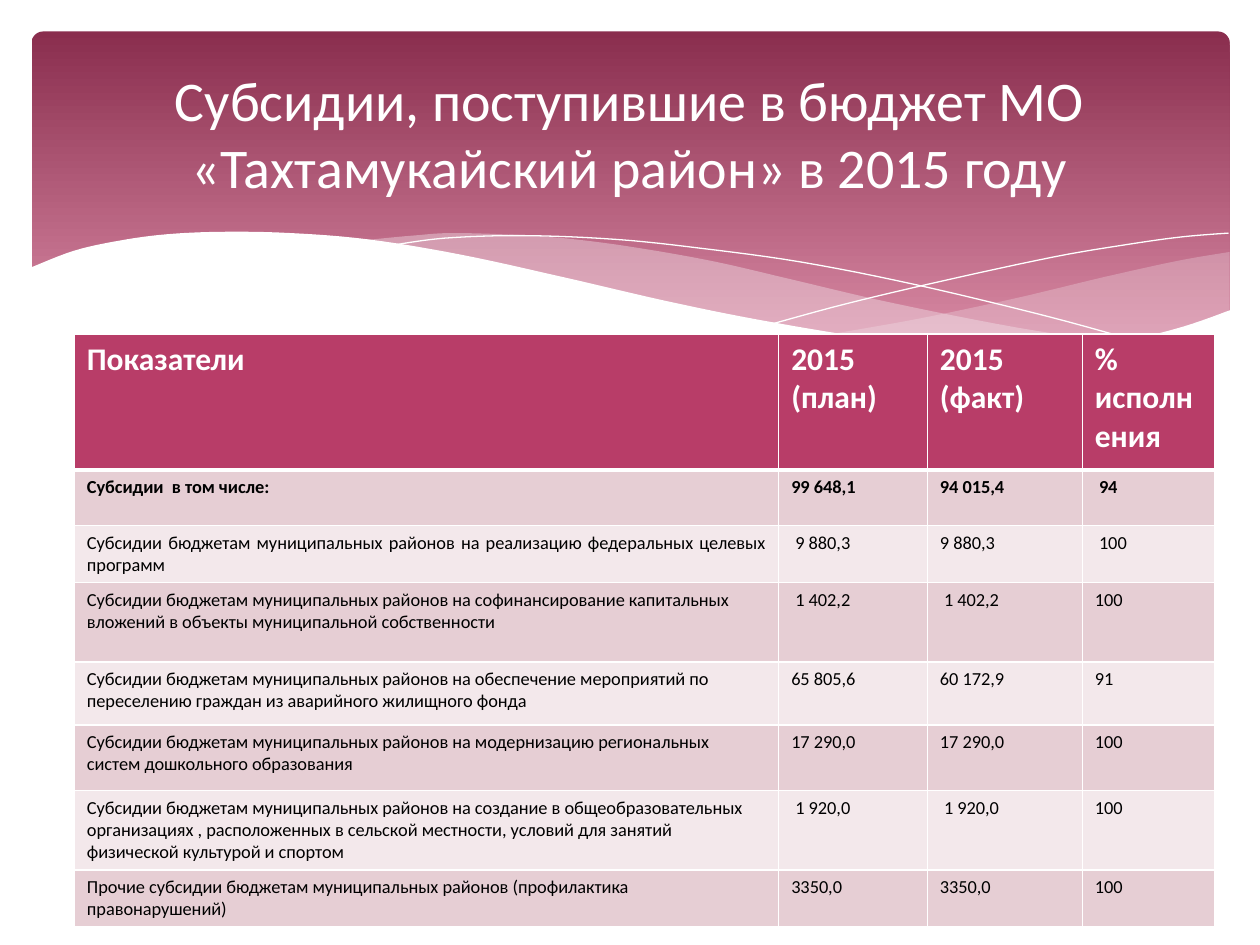
"""Build the slide on subsidies received by the district budget in 2015."""
import pptx
import pptx.dml.color
import pptx.enum.shapes
import pptx.enum.text
import pptx.oxml
import pptx.oxml.ns
import pptx.util

Inches = pptx.util.Inches
Pt = pptx.util.Pt
RGBColor = pptx.dml.color.RGBColor
ALIGN = pptx.enum.text.PP_ALIGN

WHITE = RGBColor(0xFF, 0xFF, 0xFF)
BLACK = RGBColor(0, 0, 0)
BANNER_TOP = RGBColor(0x8A, 0x2E, 0x4E)
BANNER_BOTTOM = RGBColor(0xD7, 0x88, 0xA3)
WAVE = RGBColor(0xF4, 0xE7, 0xED)
HEADER = RGBColor(0xB8, 0x3D, 0x68)
BANDS = [RGBColor(0xE6, 0xCE, 0xD4), RGBColor(0xF3, 0xE8, 0xEB)]
FONT = "Calibri"

TITLE = "Субсидии, поступившие в бюджет МО «Тахтамукайский район» в 2015 году"
ROWS = [
    ("Показатели", "2015 (план)", "2015 (факт)", "% исполнения"),
    ("Субсидии  в том числе:", "99 648,1", "94 015,4", " 94"),
    ("Субсидии бюджетам муниципальных районов на реализацию федеральных целевых программ",
     " 9 880,3", "9 880,3", " 100"),
    ("Субсидии бюджетам муниципальных районов на софинансирование капитальных "
     "вложений в объекты муниципальной собственности", " 1 402,2", " 1 402,2", "100"),
    ("Субсидии бюджетам муниципальных районов на обеспечение мероприятий по "
     "переселению граждан из аварийного жилищного фонда", "65 805,6", "60 172,9", "91"),
    ("Субсидии бюджетам муниципальных районов на модернизацию региональных "
     "систем дошкольного образования", "17 290,0", "17 290,0", "100"),
    ("Субсидии бюджетам муниципальных районов на создание в общеобразовательных "
     "организациях , расположенных в сельской местности, условий для занятий "
     "физической культурой и спортом", " 1 920,0", " 1 920,0", "100"),
    ("Прочие субсидии бюджетам муниципальных районов (профилактика правонарушений)",
     "3350,0", "3350,0", "100"),
]
COLUMN_WIDTHS = [5.59, 1.18, 1.23, 1.05]
ROW_HEIGHTS = [1.08, 0.44, 0.45, 0.63, 0.5, 0.52, 0.63, 0.45]
JUSTIFIED_ROW = 2

RIGHT_WAVE = [
    [(9.76, 2), (9.35, 2.07), (8.76, 2.2), (8.05, 2.37), (7.29, 2.53), (6.61, 2.65)],
    [(6.61, 2.65), (7.19, 2.72), (7.69, 2.77), (8.14, 2.78), (8.63, 2.75),
     (9.05, 2.69), (9.42, 2.59), (9.76, 2.47)],
]
LONG_WAVE = [
    [(8.93, 2.73), (8.07, 2.6), (7.06, 2.4), (6.29, 2.22), (5.69, 2.08), (5.14, 1.98),
     (4.65, 1.91), (4.2, 1.87), (3.61, 1.85), (3.28, 1.87), (2.86, 1.91)],
    [(2.86, 1.91), (3.42, 1.99), (4.04, 2.11), (4.49, 2.22), (5.3, 2.4), (6.01, 2.55),
     (6.65, 2.66), (7.22, 2.74), (7.73, 2.77), (8.18, 2.78), (8.57, 2.77), (8.93, 2.73)],
]
FALLING_LINE = [[(3.09, 1.95), (3.53, 1.89), (4.16, 1.87), (4.89, 1.9), (5.56, 1.97),
                 (6.36, 2.08), (7.27, 2.26), (8.31, 2.51), (9.07, 2.72)]]
RISING_LINE = [[(6.13, 2.57), (6.72, 2.41), (7.48, 2.23), (8.36, 2.04), (8.95, 1.94),
                (9.38, 1.88), (9.75, 1.85)]]
WHITE_WAVE = [
    [(9.77, 2.46), (9.4, 2.59), (8.99, 2.69), (8.5, 2.75), (8.09, 2.77), (7.61, 2.75),
     (6.88, 2.68), (6.03, 2.54), (5.29, 2.39), (4.47, 2.2), (3.65, 2.02), (2.92, 1.9),
     (2.3, 1.85), (1.77, 1.84), (1.32, 1.86), (0.95, 1.91), (0.59, 1.99), (0.23, 2.13)],
    [(0.23, 3.29), (9.77, 3.29)],
]


def smooth(knots, steps=6):
    """Return points of a Catmull-Rom curve through the knots."""
    padded = [knots[0], *knots, knots[-1]]
    points = [knots[0]]
    for a, b, c, d in zip(padded, padded[1:], padded[2:], padded[3:]):
        for t in (step / steps for step in range(1, steps + 1)):
            points.append(tuple(
                (2 * q + (r - p) * t + (2 * p - 5 * q + 4 * r - s) * t ** 2
                 + (3 * q - p - 3 * r + s) * t ** 3) / 2
                for p, q, r, s in zip(a, b, c, d)))
    return points


def add_curve(slide, edges, fill=None, opacity=100):
    """Draw a filled wave, or a white hairline when there is no fill."""
    points = [(Inches(x), Inches(y)) for edge in edges for x, y in smooth(edge)]
    builder = slide.shapes.build_freeform(*points[0])
    builder.add_line_segments(points[1:], close=fill is not None)
    curve = builder.convert_to_shape()
    curve.shadow.inherit = False
    if fill is None:
        curve.fill.background()
        curve.line.color.rgb = WHITE
        curve.line.width = Pt(0)
        return
    curve.fill.solid()
    curve.fill.fore_color.rgb = fill
    curve.line.fill.background()
    if opacity < 100:
        color = curve.element.find(".//" + pptx.oxml.ns.qn("a:srgbClr"))
        color.append(pptx.oxml.parse_xml(
            f'<a:alpha {pptx.oxml.ns.nsdecls("a")} val="{opacity * 1000}"/>'))


def add_banner(slide):
    """Draw the gradient banner with its waves."""
    banner = slide.shapes.add_shape(
        pptx.enum.shapes.MSO_SHAPE.ROUNDED_RECTANGLE,
        Inches(0.25), Inches(0.25), Inches(9.51), Inches(2.7))
    banner.adjustments[0] = 0.034
    banner.shadow.inherit = False
    banner.line.fill.background()
    banner.fill.gradient()
    banner.fill.gradient_angle = 270
    stops = [(0, BANNER_TOP), (0.9, BANNER_BOTTOM)]
    for stop, (position, color) in zip(banner.fill.gradient_stops, stops):
        stop.position = position
        stop.color.rgb = color
    add_curve(slide, RIGHT_WAVE, WAVE, 29)
    add_curve(slide, LONG_WAVE, WAVE, 40)
    add_curve(slide, FALLING_LINE)
    add_curve(slide, RISING_LINE)
    add_curve(slide, WHITE_WAVE, WHITE)


def format_runs(paragraph, size, color, bold):
    for run in paragraph.runs:
        run.font.name = FONT
        run.font.size = Pt(size)
        run.font.bold = bold
        run.font.color.rgb = color


def set_borders(cell, widths):
    """Give the cell white borders; widths maps each side to points."""
    properties = cell._tc.get_or_add_tcPr()
    for side, width in widths.items():
        properties.append(pptx.oxml.parse_xml(
            f'<a:ln{side} {pptx.oxml.ns.nsdecls("a")} w="{Pt(width)}"><a:solidFill>'
            f'<a:srgbClr val="{WHITE}"/></a:solidFill></a:ln{side}>'))


def add_subsidies(slide):
    """Add the table of planned and received subsidies."""
    subsidies = slide.shapes.add_table(
        len(ROWS), len(COLUMN_WIDTHS), Inches(0.59), Inches(2.65),
        Inches(sum(COLUMN_WIDTHS)), Inches(sum(ROW_HEIGHTS))).table
    for column, width in zip(subsidies.columns, COLUMN_WIDTHS):
        column.width = Inches(width)
    for index, (row, height, texts) in enumerate(zip(subsidies.rows, ROW_HEIGHTS, ROWS)):
        row.height = Inches(height)
        is_header = index == 0
        for cell, text in zip(row.cells, texts):
            cell.text_frame.text = text
            format_runs(cell.text_frame.paragraphs[0], 18 if is_header else 10.5,
                        WHITE if is_header else BLACK, index < 2)
            set_borders(cell, {"L": 1, "R": 1, "T": 3 if index == 1 else 1,
                               "B": 3 if is_header else 1})
            cell.fill.solid()
            cell.fill.fore_color.rgb = HEADER if is_header else BANDS[(index - 1) % 2]
    subsidies.cell(JUSTIFIED_ROW, 0).text_frame.paragraphs[0].alignment = ALIGN.JUSTIFY


def place_title(slide):
    """Fill the title and bring it in front of the banner."""
    title = slide.shapes.title
    title.left, title.top = Inches(0.5), Inches(0.37)
    title.width, title.height = Inches(9), Inches(1.37)
    title.text_frame.text = TITLE
    title.text_frame.word_wrap = True
    title.text_frame.auto_size = pptx.enum.text.MSO_AUTO_SIZE.NONE
    title.text_frame.vertical_anchor = pptx.enum.text.MSO_ANCHOR.MIDDLE
    title.text_frame.paragraphs[0].alignment = ALIGN.CENTER
    format_runs(title.text_frame.paragraphs[0], 32, WHITE, False)
    title.element.getparent().append(title.element)


def main():
    presentation = pptx.Presentation()
    presentation.slide_width, presentation.slide_height = Inches(10), Inches(7.5)
    slide = presentation.slides.add_slide(presentation.slide_layouts[5])
    add_banner(slide)
    add_subsidies(slide)
    place_title(slide)
    presentation.save("out.pptx")


if __name__ == "__main__":
    main()
